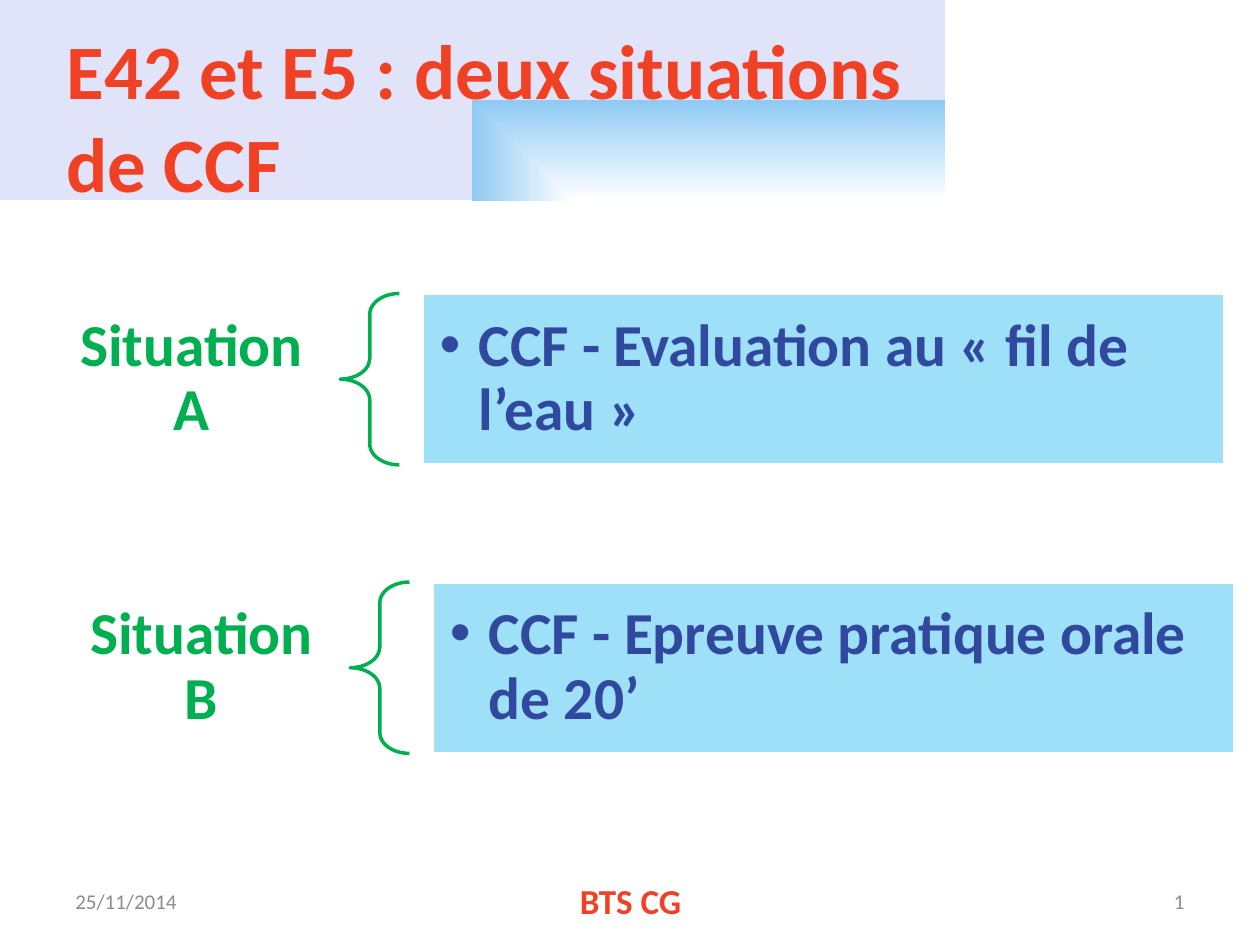
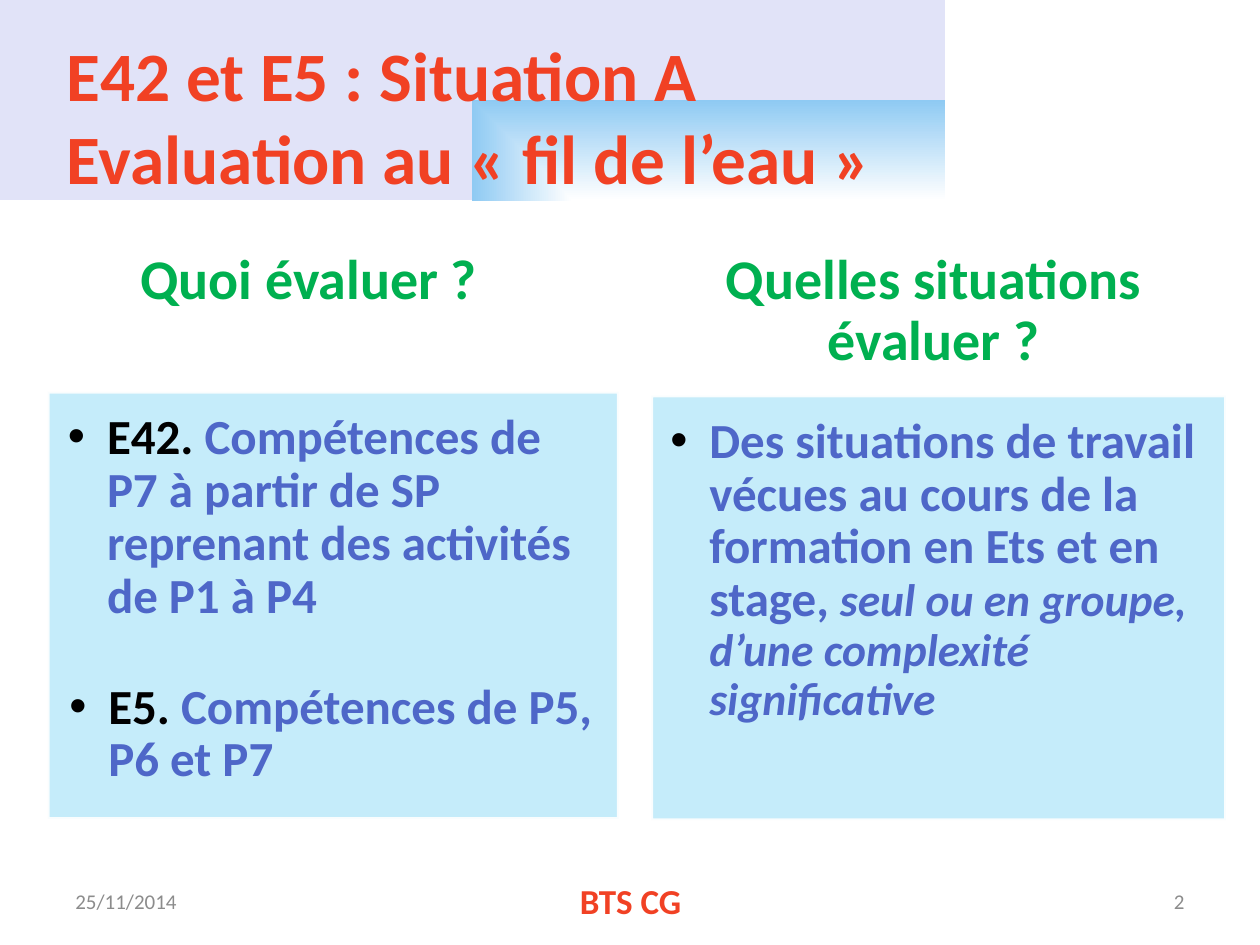
from lxml import etree
from pptx import Presentation, util as u
from pptx.dml.color import RGBColor
from pptx.enum import shapes, text
from pptx.oxml import ns

# Colours and font
RED = RGBColor(0xF1, 0x41, 0x24)
GREEN = RGBColor(0x00, 0xB0, 0x50)
NAVY = RGBColor(0x31, 0x48, 0x9F)
BLUE = RGBColor(0x4E, 0x67, 0xC8)
SKY = RGBColor(0x9E, 0xE0, 0xF8)
PALE = RGBColor(0xBF, 0xEB, 0xFA)
GREY = RGBColor(0x8C, 0x8C, 0x8C)
BLACK = RGBColor(0, 0, 0)
WHITE = RGBColor(255, 255, 255)
FONT = "Calibri"

# Content
DATE, COURSE = "25/11/2014", "BTS CG"
CASES = [
    ("Situation A", "CCF - Evaluation au «\u00a0fil de l’eau\u00a0»"),
    ("Situation B", "CCF - Epreuve pratique orale de 20’"),
]
HEADS = [
    ("Quoi évaluer ?", (0.71, 1.78, 3.48, 0.91)),
    ("Quelles situations évaluer ?", (5.2, 2.02, 4.42, 0.91)),
]
PANELS = [(0.38, 3.11, 4.53, 3.39), (5.17, 3.14, 4.56, 3.37)]
POINTS = [
    ((0.38, 3.11, 4.53, 2.14), [
        ("E42. ", 28, BLACK, False),
        ("Compétences de P7 à partir de SP reprenant des activités "
         "de P1 à P4", 28, BLUE, False)]),
    ((0.39, 5.25, 4.53, 1.19), [
        ("E5. ", 28, BLACK, False),
        ("Compétences de P5, P6 et P7", 28, BLUE, False)]),
    ((5.16, 3.14, 4.72, 3.1), [
        ("Des situations de travail vécues au cours de la formation "
         "en Ets et en stage, ", 28, BLUE, False),
        ("seul ou en groupe, d’une complexité significative",
         26, BLUE, True)]),
]

# Layout: offset from one case to the next, inner margins
STEP = (0.08, 2.29)
INSET = (0.1, 0.05, 0.1, 0.05)
LABEL = (0.26, 0.09, 0.26, 0.09)
HEAD = (0.25, 0.14, 0.25, 0.14)
BOX = (0.14,) * 4
BODY = (0.16, 0.16, 0.22, 0.24)
MID, TOP = text.MSO_ANCHOR.MIDDLE, text.MSO_ANCHOR.TOP
LEFT, MIDST, RIGHT = (text.PP_ALIGN.LEFT, text.PP_ALIGN.CENTER,
                      text.PP_ALIGN.RIGHT)


def sub(up, tag, **atts):
    return etree.SubElement(up, ns.qn(tag), atts)


def form(kind, at, page, fill=None, line=None):
    part = page.shapes.add_shape(kind, *map(u.Inches, at))
    part.shadow.inherit = False
    if fill is None:
        part.fill.background()
    else:
        part.fill.solid()
        part.fill.fore_color.rgb = fill
    if line is None:
        part.line.fill.background()
    else:
        part.line.color.rgb = line
        part.line.width = u.Pt(2)
    return part


def write(part, runs, inset=INSET, align=LEFT, anchor=MID, space=None,
          dot=None):
    """Fill a shape with one paragraph of (words, size, colour, italic)."""
    frame = part.text_frame
    frame.word_wrap, frame.vertical_anchor = True, anchor
    for side, gap in zip(("left", "top", "right", "bottom"), inset):
        setattr(frame, "margin_" + side, u.Inches(gap))
    para = frame.paragraphs[0]
    para.alignment, para.line_spacing = align, space
    if dot is not None:
        props = para._p.get_or_add_pPr()
        props.set("marL", str(u.Inches(0.31)))
        props.set("indent", str(u.Inches(-0.31)))
        sub(sub(props, "a:buClr"), "a:srgbClr", val=str(dot))
        sub(props, "a:buFont", typeface="Arial")
        sub(props, "a:buChar", char="•")
    for words, size, hue, slant in runs:
        for num, line in enumerate(words.split("\n")):
            if num:
                para.add_line_break()
            run = para.add_run()
            run.text = line
            style = {"name": FONT, "size": u.Pt(size), "bold": size > 12,
                     "italic": slant}
            for key, val in style.items():
                setattr(run.font, key, val)
            run.font.color.rgb = hue


def note(page, at, runs, **style):
    write(page.shapes.add_textbox(*map(u.Inches, at)), runs, **style)


def band(page):
    part = form(shapes.MSO_SHAPE.RECTANGLE, (0, 0, 7.5, 1.59), page)
    props = part._element.spPr
    grad = etree.Element(ns.qn("a:gradFill"), rotWithShape="1")
    stops = sub(grad, "a:gsLst")
    for pos, hue in ((0, "FFFFFF"), (100, "8FCAF3"), (100, "C1C7F2"),
                     (100, "E1E3F8")):
        sub(sub(stops, "a:gs", pos=str(pos * 1000)), "a:srgbClr", val=hue)
    sub(sub(grad, "a:path", path="rect"), "a:fillToRect",
        l="100000", t="100000")
    props.replace(props.find(ns.qn("a:noFill")), grad)


def start(deck, title, size):
    """Add a slide with band, title and footer."""
    page = deck.slides.add_slide(deck.slide_layouts[6])
    band(page)
    note(page, (0.43, 0.29, 9, 1.25), [(title, size, RED, False)])
    foot = [(0.5, 2.33, DATE, 12, GREY, LEFT),
            (3.42, 3.17, COURSE, 20, RED, MIDST),
            (7.17, 2.33, str(len(deck.slides)), 12, GREY, RIGHT)]
    for x, wide, words, pts, hue, align in foot:
        note(page, (x, 6.95, wide, 0.4), [(words, pts, hue, False)],
             align=align)
    return page


def cases(deck):
    page = start(deck, "E42 et E5 : deux situations\nde CCF", 44)
    for row, (name, words) in enumerate(CASES):
        x, y = (row * gap for gap in STEP)
        note(page, (0.35 + x, 2.39 + y, 2.34, 1.24),
             [(name, 34, GREEN, False)], inset=LABEL, align=MIDST, space=0.9)
        brace = form(shapes.MSO_SHAPE.LEFT_BRACE,
                     (2.7 + x, 2.33 + y, 0.47, 1.36), page, line=GREEN)
        brace.adjustments[0], brace.adjustments[1] = 0.35, 0.5
        box = form(shapes.MSO_SHAPE.RECTANGLE,
                   (3.35 + x, 2.33 + y, 6.37, 1.36), page, SKY, WHITE)
        write(box, [(words, 34, NAVY, False)], inset=BOX, space=0.9, dot=NAVY)


def detail(deck):
    page = start(deck, "E42 et E5 : Situation A\n"
                 "Evaluation au «\u00a0fil de l’eau\u00a0»", 39.6)
    for words, at in HEADS:
        note(page, at, [(words, 32, GREEN, False)], inset=HEAD, align=MIDST,
             space=0.9)
    for at in PANELS:
        part = form(shapes.MSO_SHAPE.RECTANGLE, at, page, PALE, WHITE)
        for hue in part._element.spPr.iter(ns.qn("a:srgbClr")):
            sub(hue, "a:alpha", val="90000")
    for at, runs in POINTS:
        note(page, at, runs, inset=BODY, anchor=TOP, space=0.9, dot=BLACK)


def main():
    deck = Presentation()
    deck.slide_width, deck.slide_height = u.Inches(10), u.Inches(7.5)
    cases(deck)
    detail(deck)
    deck.save("out.pptx")


if __name__ == "__main__":
    main()
